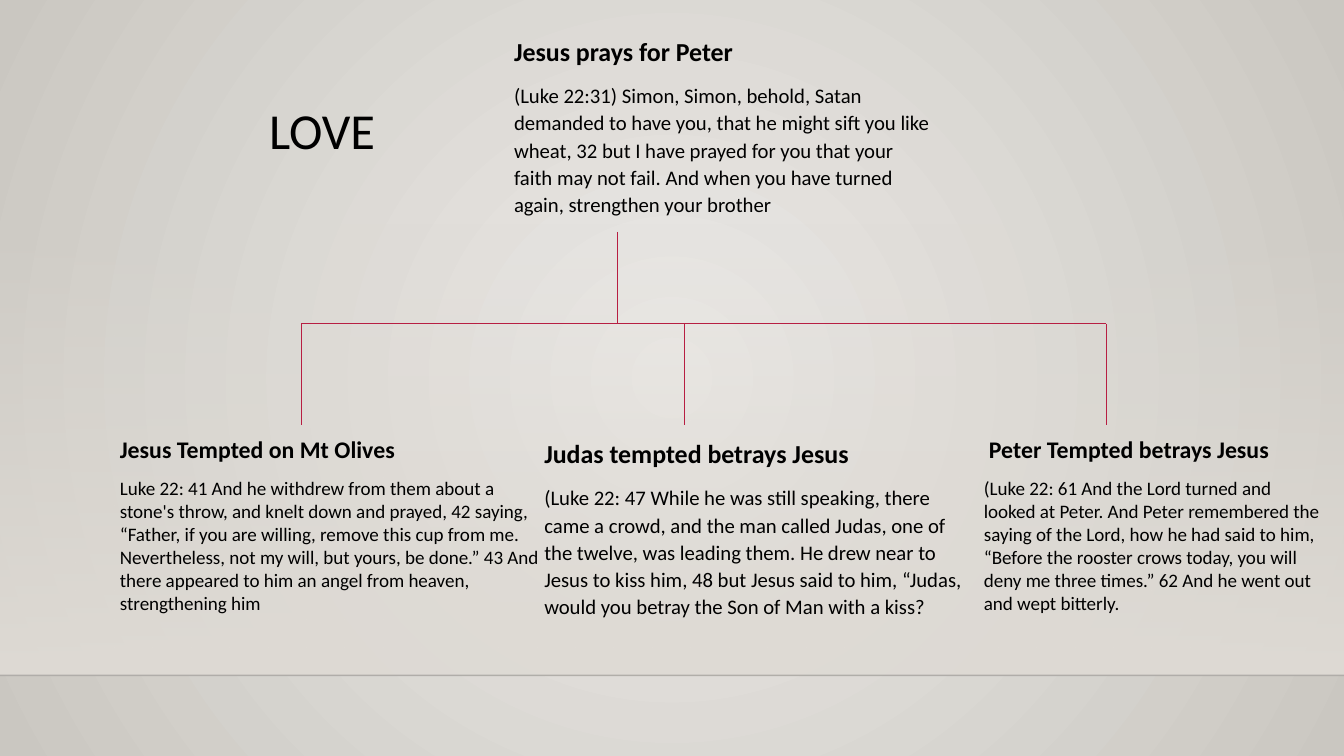
from lxml.etree import SubElement
from pptx import Presentation
from pptx.dml.color import RGBColor
from pptx.enum.shapes import MSO_CONNECTOR, MSO_SHAPE
from pptx.enum.text import MSO_AUTO_SIZE
from pptx.oxml import parse_xml
from pptx.oxml.ns import nsdecls, qn
from pptx.util import Inches, Pt

BLACK = RGBColor(0x00, 0x00, 0x00)
CRIMSON = RGBColor(0xB7, 0x1E, 0x42)
EDGE = RGBColor(0x00, 0x00, 0x01)
SAND = RGBColor(0xDF, 0xDB, 0xD5)
PALE = RGBColor(0xEC, 0xEA, 0xE7)
STONE = RGBColor(0xCA, 0xC7, 0xC1)

DOWNWARD = '<a:lin ang="5400000" scaled="0"/>'
RADIAL = ('<a:path path="circle">'
          '<a:fillToRect l="50000" t="50000" r="50000" b="50000"/></a:path>')

WIDTH, HEIGHT = 13.33, 7.5
FLOOR = 6.7
BRANCH_TOP, BRANCH_BOTTOM = 3.21, 4.22
BRANCHES = (2.99, 6.79, 10.97)
TRUNK = 6.12
LARGE = (18.5, 14.8, 1.1)
SMALL = (17, 13.6, 1.0)

PASSAGES = (
    (5, 0.27, 4.35, LARGE, 0, "Jesus prays for Peter",
     "(Luke 22:31) Simon, Simon, behold, Satan demanded to have you, that he "
     "might sift you like wheat, 32 but I have prayed for you that your faith "
     "may not fail. And when you have turned again, strengthen your brother"),
    (1.09, 4.26, 4.35, SMALL, 0, "Jesus Tempted on Mt Olives",
     "Luke 22: 41 And he withdrew from them about a stone's throw, and knelt "
     "down and prayed, 42 saying, “Father, if you are willing, remove this cup "
     "from me. Nevertheless, not my will, but yours, be done.” 43 And there "
     "appeared to him an angel from heaven, strengthening him"),
    (5.3, 4.26, 4.35, LARGE, 0, "Judas tempted betrays Jesus",
     "(Luke 22: 47 While he was still speaking, there came a crowd, and the man "
     "called Judas, one of the twelve, was leading them. He drew near to Jesus "
     "to kiss him, 48 but Jesus said to him, “Judas, would you betray the Son "
     "of Man with a kiss?"),
    (9.66, 4.26, 3.56, SMALL, 0.05, "Peter Tempted betrays Jesus",
     "(Luke 22: 61 And the Lord turned and looked at Peter. And Peter remembered "
     "the saying of the Lord, how he had said to him, “Before the rooster crows "
     "today, you will deny me three times.” 62 And he went out and wept "
     "bitterly."),
)


class SlideBuilder:
    """Draws styled elements on the current slide."""

    def __init__(self, slide, font="Calibri"):
        self.slide = slide
        self.font = font

    def gradient(self, fill, element, stops, direction):
        fill.gradient()
        placeholder = element.find(".//" + qn("a:gradFill"))
        stop_list = "".join(
            f'<a:gs pos="{position * 1000}"><a:srgbClr val="{color}">'
            f'<a:alpha val="{opacity * 1000}"/></a:srgbClr></a:gs>'
            for position, color, opacity in stops)
        gradient = parse_xml(
            f'<a:gradFill {nsdecls("a")} rotWithShape="1">'
            f'<a:gsLst>{stop_list}</a:gsLst>{direction}</a:gradFill>')
        placeholder.getparent().replace(placeholder, gradient)

    def background(self, stops):
        self.gradient(self.slide.background.fill, self.slide.element, stops, RADIAL)

    def band(self, top, height, stops):
        shape = self.slide.shapes.add_shape(
            MSO_SHAPE.RECTANGLE, 0, Inches(top), Inches(WIDTH), Inches(height))
        shape.shadow.inherit = False
        shape.line.fill.background()
        self.gradient(shape.fill, shape.element, stops, DOWNWARD)

    def line(self, x1, y1, x2, y2, color=CRIMSON, width=0.75, opacity=100):
        connector = self.slide.shapes.add_connector(
            MSO_CONNECTOR.STRAIGHT, Inches(x1), Inches(y1), Inches(x2), Inches(y2))
        connector.line.color.rgb = color
        connector.line.width = Pt(width)
        properties = connector.element.spPr
        if opacity < 100:
            color_element = properties.find(".//" + qn("a:srgbClr"))
            SubElement(color_element, qn("a:alpha")).set("val", str(opacity * 1000))
        SubElement(properties, qn("a:effectLst"))

    def text_box(self, left, top, width, height, wrap=True):
        box = self.slide.shapes.add_textbox(
            Inches(left), Inches(top), Inches(width), Inches(height))
        box.text_frame.word_wrap = wrap
        return box.text_frame

    def add_text(self, paragraph, text, size, bold=False):
        run = paragraph.add_run()
        run.text = text
        run.font.name = self.font
        run.font.size = Pt(size)
        run.font.bold = bold
        run.font.color.rgb = BLACK

    def title(self, left, top, width, height, text):
        frame = self.text_box(left, top, width, height, wrap=False)
        frame.auto_size = MSO_AUTO_SIZE.SHAPE_TO_FIT_TEXT
        self.add_text(frame.paragraphs[0], text, 36)

    def passage(self, left, top, width, sizes, indent, heading, verse):
        heading_size, verse_size, spacing = sizes
        frame = self.text_box(left, top, width, 2.03)
        first = frame.paragraphs[0]
        first.line_spacing = spacing
        if indent:
            first._p.get_or_add_pPr().set("marL", str(Inches(indent)))
        self.add_text(first, heading, heading_size, bold=True)
        second = frame.add_paragraph()
        second.line_spacing = spacing
        second.space_before = Pt(10)
        self.add_text(second, verse, verse_size)


def main():
    presentation = Presentation()
    presentation.slide_width = Inches(WIDTH)
    presentation.slide_height = Inches(HEIGHT)
    builder = SlideBuilder(presentation.slides.add_slide(presentation.slide_layouts[6]))

    builder.background([(0, PALE, 100), (100, STONE, 100)])
    builder.band(2.21, FLOOR - 2.21, [(0, SAND, 0), (100, SAND, 100)])
    builder.line(0, FLOOR, WIDTH, FLOOR, EDGE, 1, 20)

    builder.line(TRUNK, 2.3, TRUNK, BRANCH_TOP)
    builder.line(BRANCHES[0], BRANCH_TOP, BRANCHES[-1], BRANCH_TOP)
    for x in BRANCHES:
        builder.line(x, BRANCH_TOP, x, BRANCH_BOTTOM)

    for passage in PASSAGES:
        builder.passage(*passage)
    builder.title(2.57, 0.93, 1.4, 0.71, "LOVE")

    presentation.save("out.pptx")


if __name__ == "__main__":
    main()
